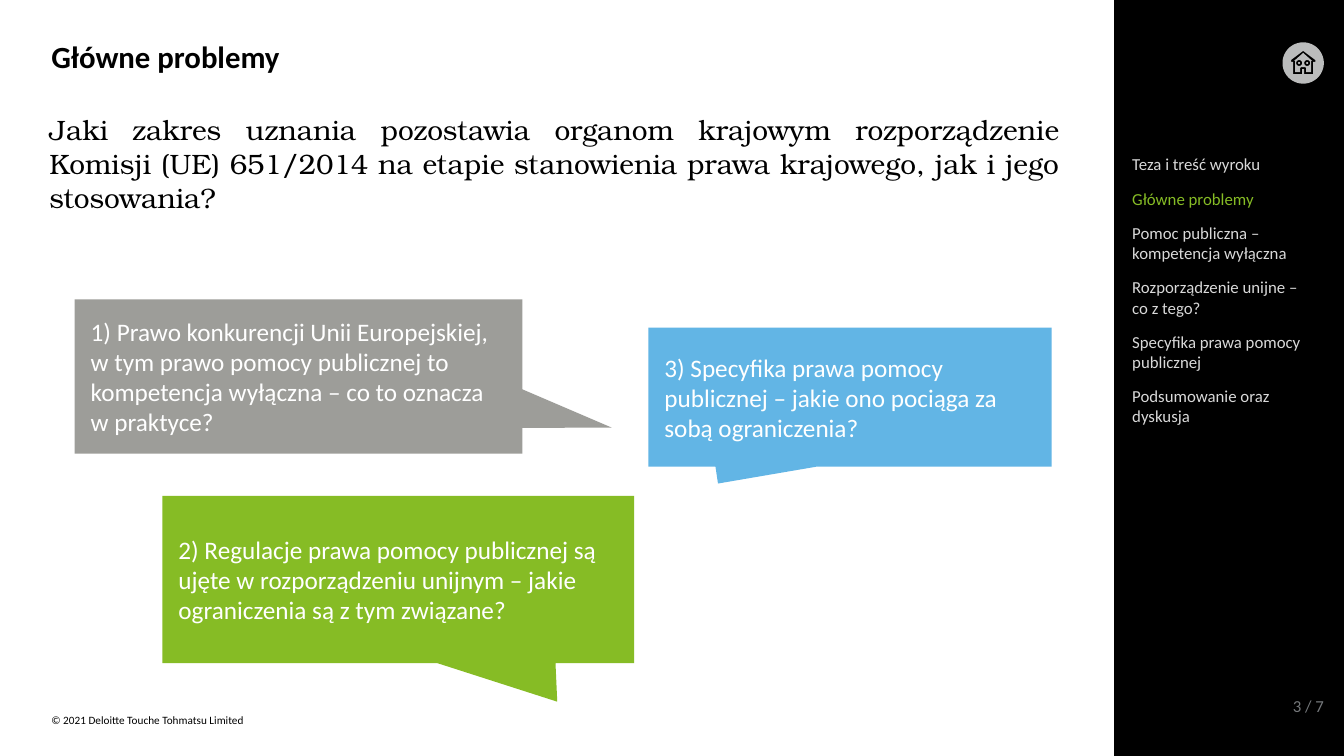
from dataclasses import dataclass
from math import cos, pi, sin

from pptx import Presentation
from pptx.dml.color import RGBColor
from pptx.enum.shapes import MSO_SHAPE
from pptx.enum.text import MSO_ANCHOR, MSO_AUTO_SIZE, PP_ALIGN
from pptx.util import Inches, Pt


@dataclass(frozen=True)
class Theme:
    """Fonts, type sizes and colours of the deck."""
    sans: str = "Calibri"
    serif: str = "TeX Gyre Bonum"
    title_size: int = 22
    question_size: int = 20
    callout_size: int = 18
    menu_size: int = 12
    footer_size: int = 8
    black: str = "000000"
    white: str = "FFFFFF"
    silver: str = "D9D9D9"
    icon: str = "BBBCBC"
    number: str = "75787B"
    grey: str = "9D9D99"
    green: str = "86BC25"
    blue: str = "62B5E5"


THEME = Theme()
TITLE = "Główne problemy"
QUESTION = ("Jaki zakres uznania pozostawia organom krajowym rozporządzenie "
            "Komisji (UE) 651/2014 na etapie stanowienia prawa krajowego, "
            "jak i jego stosowania?")
CALLOUTS = [
    ((0.74, 2.97, 4.44, 1.53), (0.7, 0.332), THEME.grey,
     "1) Prawo konkurencji Unii Europejskiej, w tym prawo pomocy publicznej "
     "to kompetencja wyłączna – co to oznacza w praktyce?"),
    ((1.61, 4.92, 4.68, 1.66), (0.337, 0.73), THEME.green,
     "2) Regulacje prawa pomocy publicznej są ujęte w rozporządzeniu unijnym "
     "– jakie ograniczenia są z tym związane?"),
    ((6.43, 3.25, 4, 1.38), (-0.327, 0.621), THEME.blue,
     "3) Specyfika prawa pomocy publicznej – jakie ono pociąga za sobą "
     "ograniczenia?"),
]
MENU = [
    ("Teza i treść wyroku", 1),
    (TITLE, 1),
    ("Pomoc publiczna – kompetencja wyłączna", 2),
    ("Rozporządzenie unijne – co z tego?", 2),
    ("Specyfika prawa pomocy publicznej", 2),
    ("Podsumowanie oraz dyskusja", 2),
]
HOUSE_OUTSIDE = [(0, -0.12), (0.12, -0.03), (0.12, -0.01), (0.1, -0.01),
                 (0.1, 0.11), (0.01, 0.11), (0.01, 0.06)]
HOUSE_INSIDE = [(0, -0.1), (0.09, -0.02), (0.08, -0.02), (0.08, 0.09),
                (0.03, 0.09), (0.03, 0.05), (0.02, 0.04)]


def place(shape, box):
    """Move a shape to a box of left, top, width and height in inches."""
    for name, value in zip(("left", "top", "width", "height"), box):
        setattr(shape, name, Inches(value))


def write(shape, text, size, color, font=THEME.sans, bold=False,
          align=PP_ALIGN.LEFT, anchor=MSO_ANCHOR.TOP, insets=(0, 0)):
    """Put one formatted paragraph into a shape."""
    across, down = (Inches(inset) for inset in insets)
    frame = shape.text_frame
    frame_format = {"word_wrap": True, "auto_size": MSO_AUTO_SIZE.NONE,
                    "vertical_anchor": anchor,
                    "margin_left": across, "margin_right": across,
                    "margin_top": down, "margin_bottom": down}
    for name, value in frame_format.items():
        setattr(frame, name, value)
    para = frame.paragraphs[0]
    para.alignment = align
    span = para.add_run()
    span.text = text
    span_format = {"name": font, "size": Pt(size), "bold": bold}
    for name, value in span_format.items():
        setattr(span.font, name, value)
    span.font.color.rgb = RGBColor.from_string(color)


def paint(shape, color):
    """Give a shape a plain fill without line or shadow."""
    shape.shadow.inherit = False
    shape.fill.solid()
    shape.fill.fore_color.rgb = RGBColor.from_string(color)
    shape.line.fill.background()


def add_label(page, box, text, size, color, **formats):
    """Add a text box without insets."""
    label = page.shapes.add_textbox(*map(Inches, box))
    write(label, text, size, color, **formats)


def add_heading(page, box):
    """Fill the title placeholder."""
    place(page.shapes.title, box)
    write(page.shapes.title, TITLE, THEME.title_size, THEME.black,
          bold=True, insets=(0.1, 0.05))


def add_callout(page, box, tip, color, text):
    """Add a speech box whose tip is given relative to its centre."""
    callout = page.shapes.add_shape(MSO_SHAPE.RECTANGULAR_CALLOUT,
                                    *map(Inches, box))
    paint(callout, color)
    for index, value in enumerate(tip):
        callout.adjustments[index] = value
    write(callout, text, THEME.callout_size, THEME.white,
          anchor=MSO_ANCHOR.MIDDLE, insets=(0.16, 0.16))


def ring(radius, steps, center=0):
    """Return the points of a circle around a point on the icon's axis."""
    return [(center + radius * cos(2 * pi * step / steps),
             radius * sin(2 * pi * step / steps)) for step in range(steps)]


def mirror(half):
    """Close a right-hand outline with its reflection."""
    return half + [(-x, y) for x, y in reversed(half[1:])]


def add_home_icon(page, box):
    """Add a disc with a house cut out of it."""
    left, top, width, height = box
    outlines = [ring(width / 2, 72), mirror(HOUSE_OUTSIDE),
                mirror(HOUSE_INSIDE)]
    outlines += [ring(radius, 16, center) for center in (-0.04, 0.04)
                 for radius in (0.03, 0.01)]
    contours = [[(Inches(left + width / 2 + x), Inches(top + height / 2 + y))
                 for x, y in outline] for outline in outlines]
    builder = page.shapes.build_freeform(*contours[0][0])
    builder.add_line_segments(contours[0][1:], close=True)
    for contour in contours[1:]:
        builder.move_to(*contour[0])
        builder.add_line_segments(contour[1:], close=True)
    paint(builder.convert_to_shape(), THEME.icon)


def add_menu(page, box):
    """Stack the chapter names and highlight the current one."""
    left, top, width, line_height = box
    gap = 0.14
    for text, lines in MENU:
        height = lines * line_height
        color = THEME.green if text == TITLE else THEME.silver
        add_label(page, (left, top, width, height), text,
                  THEME.menu_size, color)
        top += height + gap


def add_sidebar(page, box):
    """Add the black panel with icon, menu and page number."""
    left, top, width, height = box
    panel = page.shapes.add_shape(MSO_SHAPE.RECTANGLE, *map(Inches, box))
    paint(panel, THEME.black)
    add_home_icon(page, (left + 1.67, top + 0.42, 0.41, 0.41))
    add_menu(page, (left + 0.18, top + 1.53, 1.73, 0.2))
    add_label(page, (left + 0.19, top + height - 0.6, width - 0.39, 0.2),
              "3 / 7", THEME.menu_size, THEME.number, align=PP_ALIGN.RIGHT)


def main():
    """Build the deck and save it."""
    deck = Presentation()
    deck.slide_width, deck.slide_height = Inches(13.33), Inches(7.5)
    page = deck.slides.add_slide(deck.slide_layouts[5])
    add_sidebar(page, (11.05, 0, 2.28, 7.5))
    add_heading(page, (0.41, 0.32, 10.02, 0.37))
    add_label(page, (0.49, 1.12, 10.02, 1.01), QUESTION, THEME.question_size,
              THEME.black, font=THEME.serif, align=PP_ALIGN.JUSTIFY)
    for callout in CALLOUTS:
        add_callout(page, *callout)
    add_label(page, (0.51, 7.08, 5.86, 0.13),
              "© 2021 Deloitte Touche Tohmatsu Limited",
              THEME.footer_size, THEME.black)
    deck.save("out.pptx")


if __name__ == "__main__":
    main()
